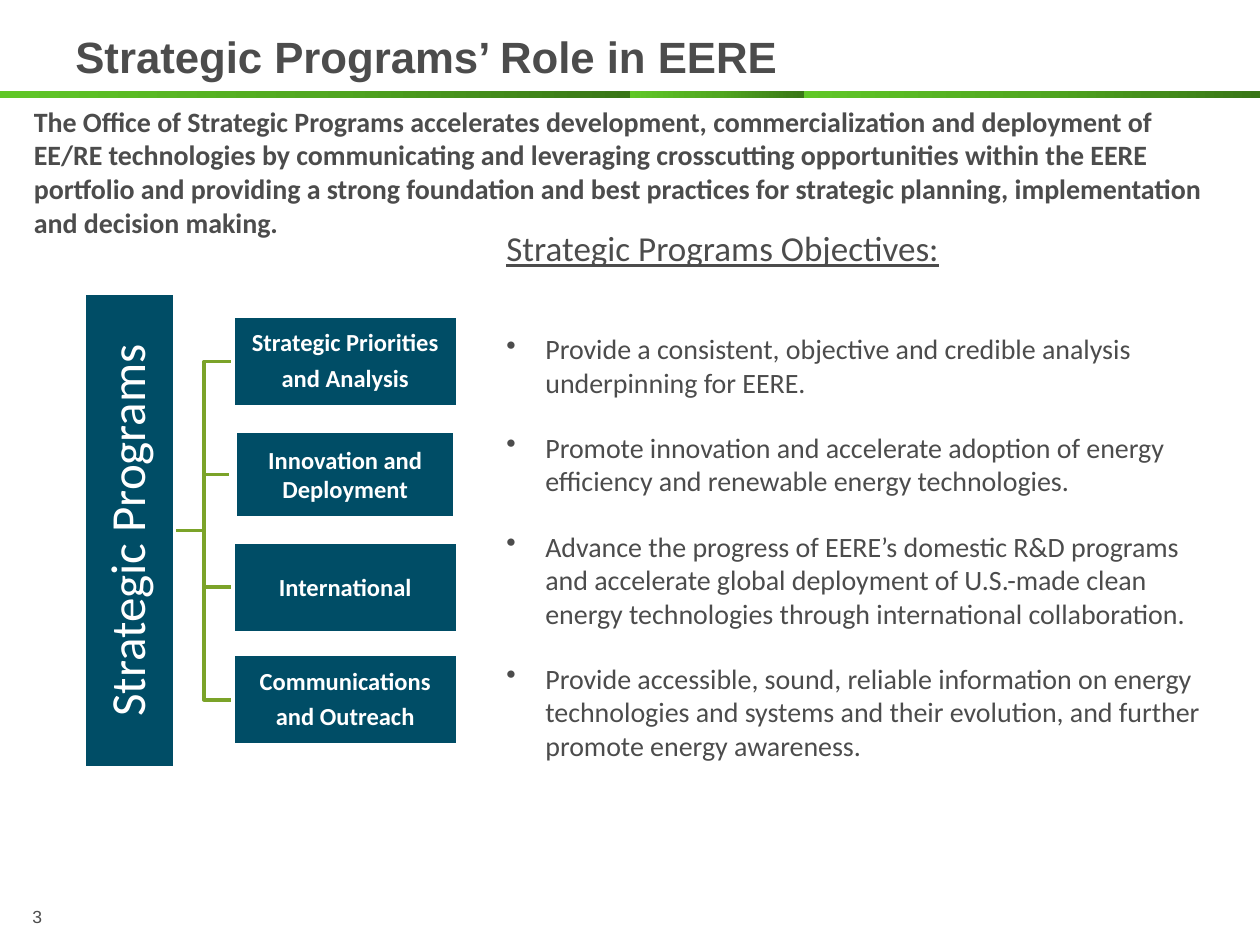
from copy import deepcopy
from dataclasses import dataclass

from lxml import etree
from pptx import Presentation
from pptx.dml.color import RGBColor
from pptx.enum import shapes, text
from pptx.oxml import ns
from pptx.util import Inches, Pt


@dataclass(frozen=True)
class Theme:
    gray: RGBColor = RGBColor.from_string("4C4C4C")
    white: RGBColor = RGBColor.from_string("FFFFFF")
    teal: RGBColor = RGBColor.from_string("004D66")
    green: RGBColor = RGBColor.from_string("7BA329")
    fade: tuple = ("60C727", "51A820", "397617")
    head: int = 25
    spine: int = 28
    sub: int = 20
    body: int = 16
    label: int = 14
    small: int = 10


T = Theme()
RECT = shapes.MSO_SHAPE.RECTANGLE
MID = text.MSO_ANCHOR.MIDDLE
CENTER = text.PP_ALIGN.CENTER

prs = Presentation()
prs.slide_width, prs.slide_height = Inches(10), Inches(7.5)
slide = prs.slides.add_slide(prs.slide_layouts[6])
tree = slide.shapes


def write(frame, lines, size, color=T.gray, font="Calibri", bold=False):
    """Fill a text frame with one paragraph per line and return the paragraphs."""
    frame.word_wrap = True
    frame.text = "\n".join(lines)
    for para in frame.paragraphs:
        para.font.name, para.font.size = font, Pt(size)
        para.font.bold, para.font.color.rgb = bold, color
    return frame.paragraphs


def block(left, top, width, lines, size, edge, gap, bold=True):
    """Add a teal box with centred white text."""
    box = tree.add_shape(RECT, Inches(left), Inches(top), Inches(width), Inches(0.72))
    box.shadow.inherit = False
    box.fill.solid()
    box.fill.fore_color.rgb = T.teal
    box.line.color.rgb, box.line.width = T.white, Pt(edge)
    frame = box.text_frame
    frame.vertical_anchor = MID
    frame.margin_left = frame.margin_right = Inches(0.01)
    frame.margin_top = frame.margin_bottom = Inches(0.01)
    for para in write(frame, lines, size, T.white, bold=bold):
        para.alignment = CENTER
        if gap:
            para.line_spacing, para.space_after = 0.9, Pt(gap)
    return box


# Green rule under the title
for left, width in ((0, 5), (5, 1.38), (6.38, 3.62)):
    bar = tree.add_shape(RECT, Inches(left), Inches(0.72), Inches(width), Inches(0.06))
    bar.shadow.inherit = False
    bar.line.fill.background()
    bar.fill.gradient()
    bar.fill.gradient_angle = 0
    first = next(bar._element.iter(ns.qn("a:gs")))
    first.addnext(deepcopy(first))
    for i, (stop, shade) in enumerate(zip(bar.fill.gradient_stops, T.fade)):
        stop.position, stop.color.rgb = i / 2, RGBColor.from_string(shade)

# Title, mission and page number
title = tree.add_textbox(Inches(0.5), 0, Inches(9), Inches(0.89)).text_frame
title.vertical_anchor = MID
write(title, ["Strategic Programs’ Role in EERE"], T.head, font="Arial", bold=True)

mission = tree.add_textbox(Inches(0.17), Inches(0.78), Inches(9.58), Inches(0.83))
write(mission.text_frame, [
    "The Office of Strategic Programs accelerates development, commercialization "
    "and deployment of EE/RE technologies by communicating and leveraging "
    "crosscutting opportunities within the EERE portfolio and providing a strong "
    "foundation and best practices for strategic planning, implementation and "
    "decision making."], T.body, bold=True)

page = tree.add_textbox(Inches(0.05), Inches(7.14), Inches(0.49), Inches(0.26))
write(page.text_frame, ["3"], T.small, font="Arial")[0].alignment = CENTER

# Programs tree: brackets, spine, then the four offices
offices = (
    (["Strategic Priorities", "and Analysis"], 2, 5),
    (["Innovation and Deployment"], 4.5, 0),
    (["International"], 2, 0),
    (["Communications", "and Outreach"], 2, 5),
)
tops = [2.51 + 0.895 * i for i in range(len(offices))]
root = 4.21
for top in tops:
    mid = Inches(top + 0.36)
    pen = tree.build_freeform(Inches(1.38), Inches(root))
    pen.add_line_segments([(Inches(1.62), Inches(root)), (Inches(1.62), mid),
                           (Inches(1.85), mid)], close=False)
    link = pen.convert_to_shape()
    link.shadow.inherit = False
    link.fill.background()
    link.line.color.rgb, link.line.width = T.green, Pt(2)

spine = block(-0.86, 3.85, 3.77, ["Strategic Programs"], T.spine, 2, 10, bold=False)
spine.rotation = 270
for top, (lines, edge, gap) in zip(tops, offices):
    block(1.85, top, 1.78, lines, T.label, edge, gap)

# Objectives
goals = tree.add_textbox(Inches(3.92), Inches(1.75), Inches(5.92), Inches(5.42))
head, *items = write(goals.text_frame, [
    "Strategic Programs Objectives:",
    "Provide a consistent, objective and credible analysis underpinning for EERE.",
    "Promote innovation and accelerate adoption of energy efficiency and renewable "
    "energy technologies.",
    "Advance the progress of EERE’s domestic R&D programs and accelerate global "
    "deployment of U.S.-made clean energy technologies through international "
    "collaboration.",
    "Provide accessible, sound, reliable information on energy technologies and "
    "systems and their evolution, and further promote energy awareness.",
], T.body)
head.font.size, head.font.underline = Pt(T.sub), True
head.space_after = Pt(36)
for item in items:
    props = item._p.get_or_add_pPr()
    props.set("marL", str(Inches(0.31)))
    props.set("indent", str(-Inches(0.31)))
    dot = etree.Element(ns.qn("a:buChar"), char="•")
    props.find(ns.qn("a:defRPr")).addprevious(dot)
    item.space_after = Pt(18)

prs.save("out.pptx")
